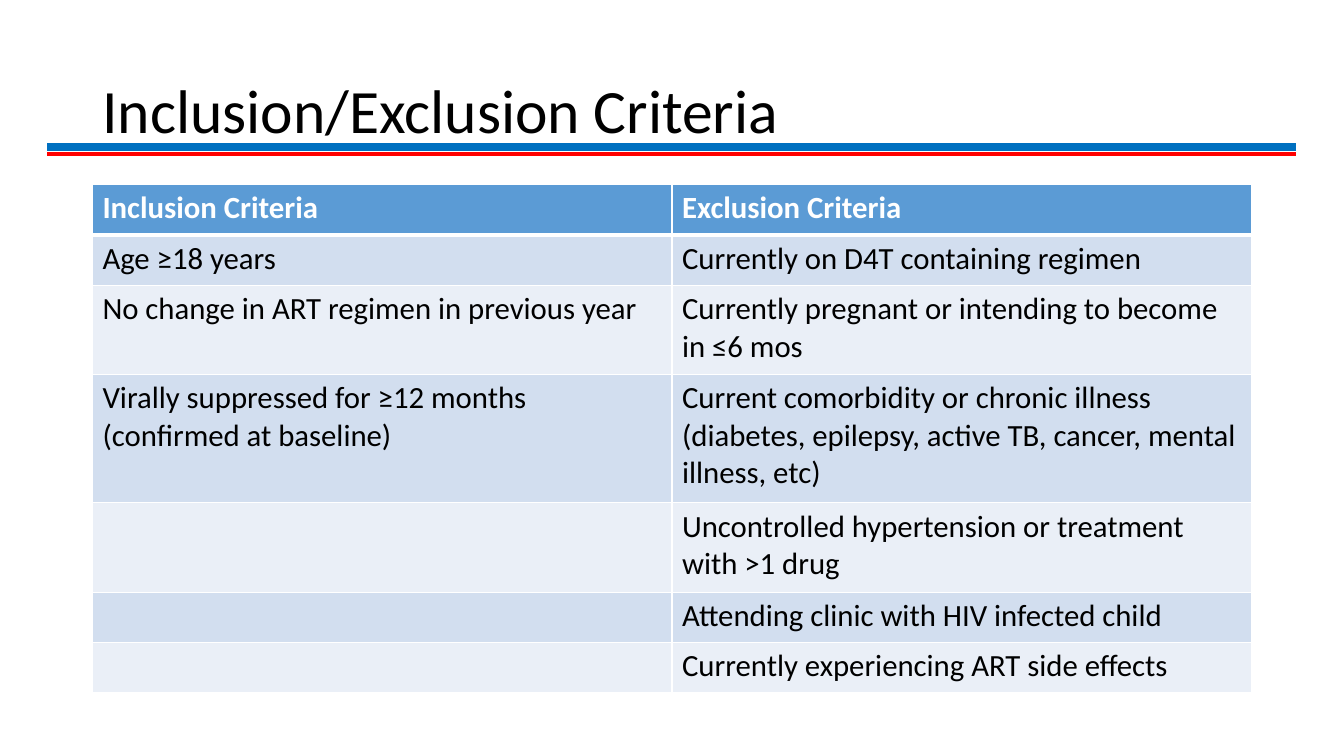
import pptx
import pptx.dml.color
import pptx.enum.shapes
import pptx.enum.text
import pptx.oxml
import pptx.oxml.ns
import pptx.util
from lxml import etree

Cm, Pt = pptx.util.Cm, pptx.util.Pt

# Content
FONT = "Calibri"
TITLE = "Inclusion/Exclusion Criteria"
# inclusion, exclusion, lines of text in the row
CRITERIA = [
    ("Inclusion Criteria", "Exclusion Criteria", 1),
    ("Age ≥18 years", "Currently on D4T containing regimen", 1),
    ("No change in ART regimen in previous year",
     "Currently pregnant or intending to become in ≤6 mos", 2),
    ("Virally suppressed for ≥12 months (confirmed at baseline)",
     "Current comorbidity or chronic illness (diabetes, epilepsy, active TB, "
     "cancer, mental illness, etc)", 3),
    ("", "Uncontrolled hypertension or treatment with >1 drug", 2),
    ("", "Attending clinic with HIV infected child", 1),
    ("", "Currently experiencing ART side effects", 1),
]
HEADER_FILL = "5B9BD5"
BAND_FILLS = ("EAEFF7", "D2DEEF")
# height on the slide in cm, colour, width in points
RULES = [(3.71, "0070C0", 6), (3.89, "FF0000", 3)]

# Layout in cm
LEFT, WIDTH = 2.33, 29.21
TABLE_TOP = 4.65
ROW_PADDING, LINE_HEIGHT = 0.29, 0.98
RULE_LEFT, RULE_RIGHT = 1.19, 32.66


def color(hex_code):
    return pptx.dml.color.RGBColor.from_string(hex_code)


def add_run(paragraph, text, size, hex_code, bold=False):
    run = paragraph.add_run()
    run.text = text
    run.font.name = FONT
    run.font.size = Pt(size)
    run.font.bold = bold
    run.font.color.rgb = color(hex_code)


def add_borders(cell, widths):
    properties = cell._tc.get_or_add_tcPr()
    for side, points in zip(("lnL", "lnR", "lnT", "lnB"), widths):
        properties.append(pptx.oxml.parse_xml(
            f'<a:{side} {pptx.oxml.ns.nsdecls("a")} w="{Pt(points)}">'
            f'<a:solidFill><a:srgbClr val="FFFFFF"/></a:solidFill></a:{side}>'))


presentation = pptx.Presentation()
presentation.slide_width, presentation.slide_height = Cm(33.87), Cm(19.05)
slide = presentation.slides.add_slide(presentation.slide_layouts[6])

# Title
title = slide.shapes.add_textbox(Cm(LEFT), Cm(1.01), Cm(WIDTH), Cm(3.68)).text_frame
title.word_wrap = True
title.vertical_anchor = pptx.enum.text.MSO_ANCHOR.MIDDLE
title.paragraphs[0].line_spacing = 0.9
add_run(title.paragraphs[0], TITLE, 44, "000000")

# Criteria table
heights = [ROW_PADDING + LINE_HEIGHT * lines for _, _, lines in CRITERIA]
criteria = slide.shapes.add_table(
    len(CRITERIA), 2, Cm(LEFT), Cm(TABLE_TOP), Cm(WIDTH), Cm(sum(heights))).table
for column in criteria.columns:
    column.width = Cm(WIDTH / 2)
for row, (inclusion, exclusion, _) in enumerate(CRITERIA):
    criteria.rows[row].height = Cm(heights[row])
    is_header = row == 0
    for column, text in enumerate((inclusion, exclusion)):
        cell = criteria.cell(row, column)
        add_borders(cell, (1, 1, 3 if row == 1 else 1, 3 if is_header else 1))
        cell.fill.solid()
        cell.fill.fore_color.rgb = color(HEADER_FILL if is_header else BAND_FILLS[row % 2])
        if text:
            add_run(cell.text_frame.paragraphs[0], text, 22,
                    "FFFFFF" if is_header else "000000", is_header)

# Double rule under the title
for height, hex_code, points in RULES:
    rule = slide.shapes.add_connector(
        pptx.enum.shapes.MSO_CONNECTOR.STRAIGHT,
        Cm(RULE_LEFT), Cm(height), Cm(RULE_RIGHT), Cm(height))
    rule.line.color.rgb = color(hex_code)
    rule.line.width = Pt(points)
    etree.SubElement(rule._element.spPr, pptx.oxml.ns.qn("a:effectLst"))

presentation.save("out.pptx")
